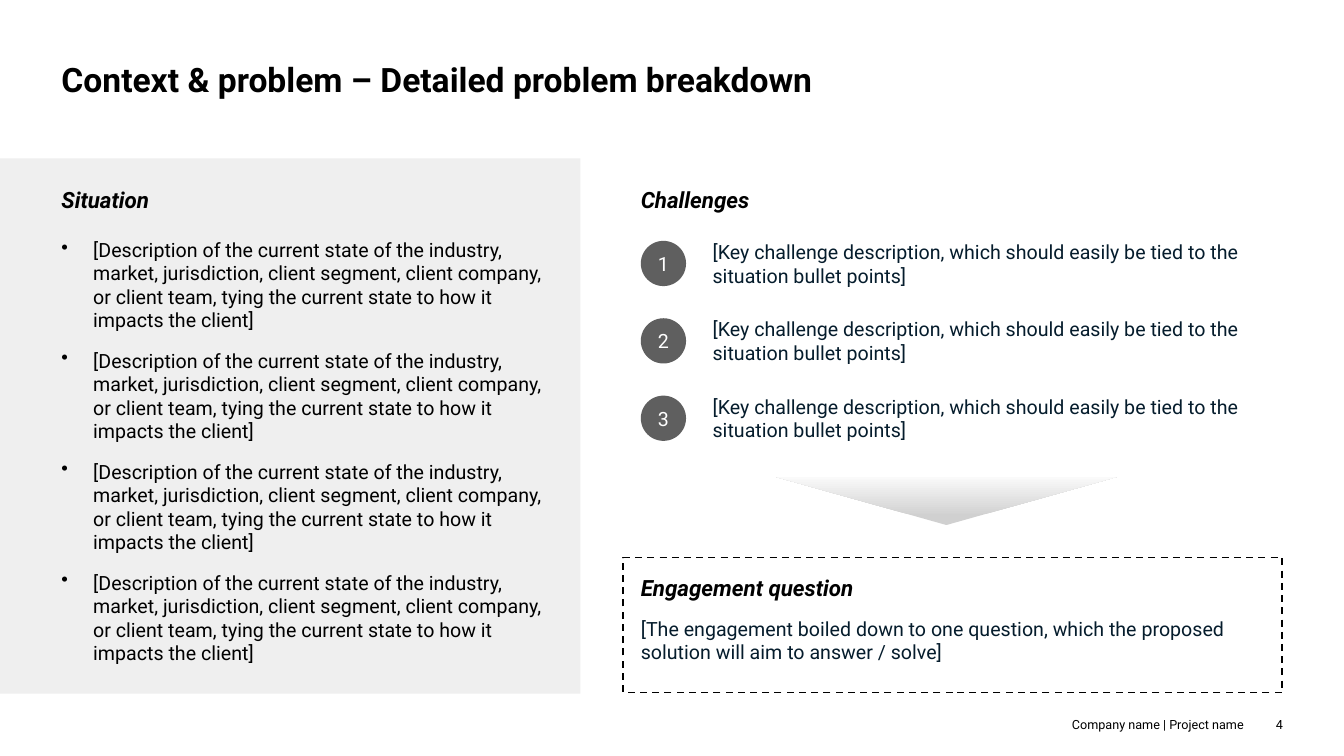
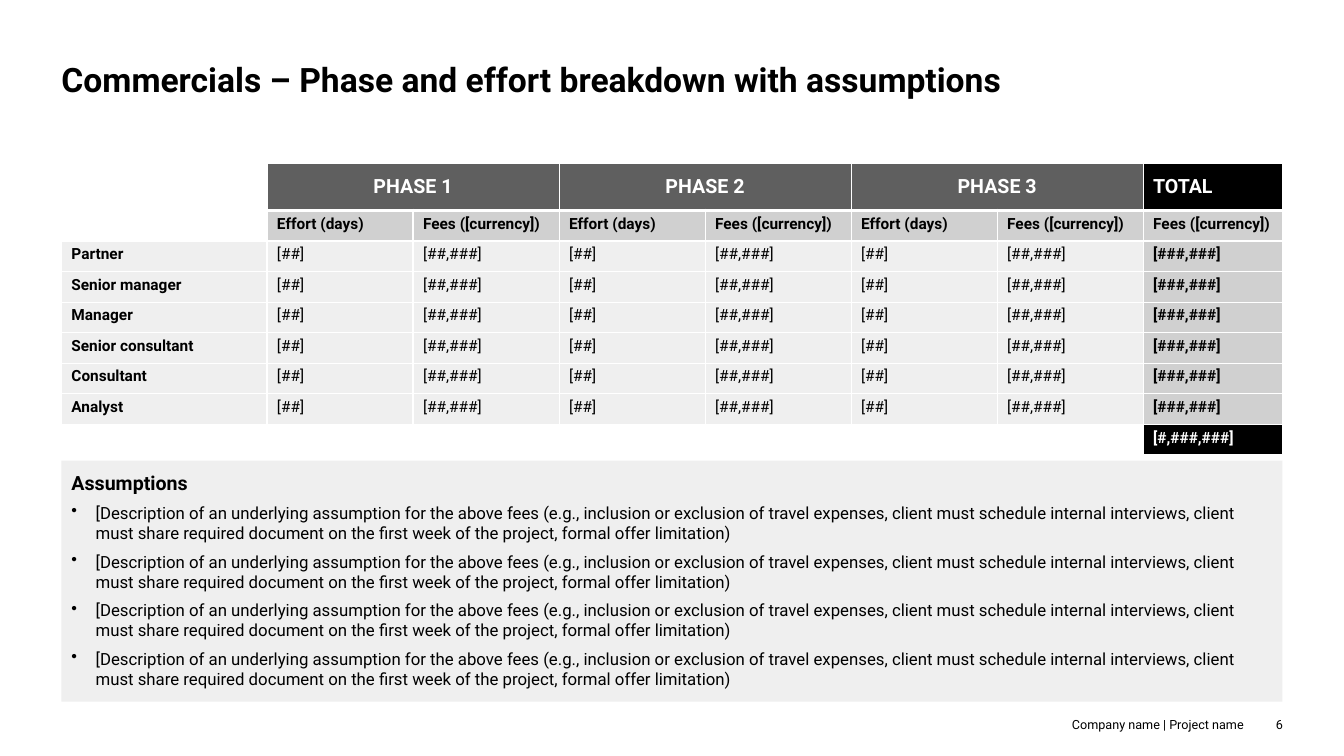
from dataclasses import dataclass

from lxml import etree
from pptx import Presentation
from pptx.dml.color import RGBColor
from pptx.enum.dml import MSO_LINE
from pptx.enum.shapes import MSO_SHAPE
from pptx.enum.text import MSO_ANCHOR, PP_ALIGN
from pptx.oxml.ns import qn
from pptx.util import Cm, Pt

TOP, MIDDLE, BOTTOM = MSO_ANCHOR.TOP, MSO_ANCHOR.MIDDLE, MSO_ANCHOR.BOTTOM
LEFT, CENTER, RIGHT = PP_ALIGN.LEFT, PP_ALIGN.CENTER, PP_ALIGN.RIGHT
RECT, OVAL, TRIANGLE = MSO_SHAPE.RECTANGLE, MSO_SHAPE.OVAL, MSO_SHAPE.ISOSCELES_TRIANGLE
DASH = MSO_LINE.DASH


@dataclass(frozen=True)
class Theme:
    font: str = "Roboto"
    black: str = "000000"
    white: str = "FFFFFF"
    navy: str = "051C2C"
    dark: str = "5F5F5F"
    mid: str = "D0D0D0"
    light: str = "EFEFEF"
    pale: str = "FAFAFA"
    title: int = 24
    heading: int = 16
    body: int = 14
    note: int = 12
    cell: int = 11
    footer: int = 9


T = Theme()

# Content
FOOTER = "Company name | Project name"
PROBLEM = {
    "title": "Context & problem – Detailed problem breakdown",
    "page": 4,
    "situation": ["[Description of the current state of the industry, market, jurisdiction, "
                  "client segment, client company, or client team, tying the current state "
                  "to how it impacts the client]"] * 4,
    "challenges": ["[Key challenge description, which should easily be tied to the "
                   "situation bullet points]"] * 3,
    "question": "[The engagement boiled down to one question, which the proposed "
                "solution will aim to answer / solve]",
}
COMMERCIALS = {
    "title": "Commercials – Phase and effort breakdown with assumptions",
    "page": 6,
    "phases": ["PHASE 1", "PHASE 2", "PHASE 3"],
    "roles": ["Partner", "Senior manager", "Manager", "Senior consultant",
              "Consultant", "Analyst"],
    "effort": ("Effort (days)", "[##]"),
    "fees": ("Fees ([currency])", "[##,###]"),
    "role_total": "[###,###]",
    "grand_total": "[#,###,###]",
    "assumptions": ["[Description of an underlying assumption for the above fees (e.g., "
                    "inclusion or exclusion of travel expenses, client must schedule internal "
                    "interviews, client must share required document on the first week of the "
                    "project, formal offer limitation)"] * 4,
}

# Shared grid, in cm
SLIDE_W, SLIDE_H = 33.87, 19.05
MARGIN = 1.55
CONTENT_W = SLIDE_W - 2 * MARGIN
RIGHT_X = 16.15
RIGHT_W = SLIDE_W - MARGIN - RIGHT_X


# Text and shape helpers
def rgb(value):
    return RGBColor.from_string(value)


def set_up_frame(frame, anchor=TOP, insets=(0, 0, 0, 0), wrap=True):
    frame.word_wrap = wrap
    frame.vertical_anchor = anchor
    (frame.margin_left, frame.margin_top,
     frame.margin_right, frame.margin_bottom) = map(Cm, insets)


def write(paragraph, text, size, color=T.black, bold=False, italic=False, align=LEFT):
    paragraph.alignment = align
    run = paragraph.add_run()
    run.text = text
    font = run.font
    font.name, font.size, font.bold, font.italic = T.font, Pt(size), bold, italic
    font.color.rgb = rgb(color)


def write_bullets(paragraphs, texts, size, indent, gap):
    for paragraph, text in zip(paragraphs, texts):
        write(paragraph, text, size)
        paragraph.space_after = Pt(gap)
        props = paragraph._p.get_or_add_pPr()
        props.set("marL", str(Cm(indent)))
        props.set("indent", str(-Cm(indent)))
        etree.SubElement(props, qn("a:buChar")).set("char", "•")


def add_text(slide, box, text, size, anchor=TOP, wrap=True, **style):
    frame = slide.shapes.add_textbox(*map(Cm, box)).text_frame
    set_up_frame(frame, anchor, wrap=wrap)
    write(frame.paragraphs[0], text, size, **style)


def add_heading(slide, x, y, width, text):
    add_text(slide, (x, y, width, 0.69), text, T.heading, bold=True, italic=True)


def add_block(slide, kind, box, fill=None):
    block = slide.shapes.add_shape(kind, *map(Cm, box))
    block.shadow.inherit = False
    block.line.fill.background()
    if fill:
        block.fill.solid()
        block.fill.fore_color.rgb = rgb(fill)
    else:
        block.fill.background()
    return block


def add_slide(deck, content):
    slide = deck.slides.add_slide(deck.slide_layouts[6])
    add_text(slide, (MARGIN, 0.99, CONTENT_W, 1.5), content["title"], T.title, BOTTOM, bold=True)
    add_text(slide, (26.92, 18.06, 4.42, 0.38), FOOTER, T.footer, BOTTOM, wrap=False, align=RIGHT)
    add_text(slide, (31.42, 18.06, 0.91, 0.38), str(content["page"]), T.footer, BOTTOM, align=RIGHT)
    return slide


# Problem breakdown
def add_challenge(slide, number, text):
    size, pitch = 1.14, 1.95
    y = 6.07 + (number - 1) * pitch
    badge = add_block(slide, OVAL, (RIGHT_X, y, size, size), T.dark)
    set_up_frame(badge.text_frame, MIDDLE)
    write(badge.text_frame.paragraphs[0], str(number), T.body, T.white, align=CENTER)
    text_x, text_h = RIGHT_X + 1.81, 1.57
    add_text(slide, (text_x, y + (size - text_h) / 2, RIGHT_X + RIGHT_W - text_x, text_h),
             text, T.body, MIDDLE, color=T.navy)


def build_problem(deck):
    slide = add_slide(deck, PROBLEM)

    # Situation
    add_block(slide, RECT, (0, 3.99, 14.63, 13.6 - 0.11), T.light)
    add_heading(slide, MARGIN, 4.7, 12.6, "Situation")
    points = slide.shapes.add_textbox(Cm(MARGIN), Cm(5.74), Cm(12.6), Cm(11.4)).text_frame
    set_up_frame(points, insets=(0, 0.25, 0.25, 0.25))
    for _ in PROBLEM["situation"][1:]:
        points.add_paragraph()
    write_bullets(points.paragraphs, PROBLEM["situation"], T.body, indent=0.8, gap=12)

    # Challenges
    add_heading(slide, RIGHT_X, 4.7, RIGHT_W, "Challenges")
    for number, text in enumerate(PROBLEM["challenges"], 1):
        add_challenge(slide, number, text)

    # Pointer down to the question
    pointer = add_block(slide, TRIANGLE, (19.53, 12.01, 8.64, 1.22))
    pointer.rotation = 180
    pointer.fill.gradient()
    pointer.fill.gradient_angle = 270
    for stop, (position, color) in zip(pointer.fill.gradient_stops,
                                       [(0.18, T.mid), (1, T.pale)]):
        stop.position = position
        stop.color.rgb = rgb(color)

    # Engagement question
    frame = add_block(slide, RECT, (15.7, 14.05, 16.61, 3.4))
    frame.line.color.rgb = rgb(T.black)
    frame.line.width = Pt(1.25)
    frame.line.dash_style = DASH
    add_heading(slide, RIGHT_X, 14.48, RIGHT_W, "Engagement question")
    add_text(slide, (RIGHT_X, 15.54, 15.65, 1.57), PROBLEM["question"], T.body, color=T.navy)


# Commercials
def fee_rows():
    """Each cell is (text, fill, text colour, bold); None leaves it empty."""
    c = COMMERCIALS
    phases = c["phases"]
    pairs = [c["effort"], c["fees"]] * len(phases)
    header = [None]
    for phase in phases:
        header += [(phase, T.dark, T.white, True), None]
    header.append(("TOTAL", T.black, T.white, True))
    labels = [label for label, _ in pairs] + [c["fees"][0]]
    rows = [header, [None] + [(label, T.mid, T.black, True) for label in labels]]
    for role in c["roles"]:
        rows.append([(role, T.light, T.black, True)]
                    + [(value, T.light, T.black, False) for _, value in pairs]
                    + [(c["role_total"], T.mid, T.black, True)])
    rows.append([None] * (len(pairs) + 1) + [(c["grand_total"], T.black, T.white, True)])
    return rows


def set_borders(cell, bottom):
    props = cell._tc.get_or_add_tcPr()
    widths = {"a:lnL": 1, "a:lnR": 1, "a:lnT": 1, "a:lnB": bottom}
    for place, (tag, width) in enumerate(widths.items()):
        line = etree.Element(qn(tag), w=str(Pt(width)))
        fill = etree.SubElement(line, qn("a:solidFill"))
        etree.SubElement(fill, qn("a:srgbClr")).set("val", T.white)
        props.insert(place, line)


def fill_cell(cell, content, is_header, align):
    pad_top, pad_bottom = (0.3, 0.3) if is_header else (0.1, 0.2)
    cell.margin_left = cell.margin_right = Cm(0.25)
    cell.margin_top, cell.margin_bottom = Cm(pad_top), Cm(pad_bottom)
    cell.vertical_anchor = MIDDLE
    paragraph = cell.text_frame.paragraphs[0]
    if content:
        text, fill, color, bold = content
        cell.fill.solid()
        cell.fill.fore_color.rgb = rgb(fill)
        write(paragraph, text, T.body if is_header else T.cell, color, bold, align=align)
    else:
        cell.fill.background()
        paragraph._p.get_or_add_endParaRPr().set("sz", str(T.cell * 100))
    set_borders(cell, bottom=3 if is_header else 1)


def add_fee_table(slide):
    rows = fee_rows()
    phase_columns = range(1, len(rows[0]) - 1, 2)
    widths = [5.18] + [3.68] * (2 * len(phase_columns)) + [3.5]
    heights = [1.19] + [0.77] * (len(rows) - 1)
    table = slide.shapes.add_table(len(rows), len(widths), Cm(MARGIN), Cm(4.11),
                                   Cm(sum(widths)), Cm(sum(heights))).table
    table.first_row = table.horz_banding = False
    for column, width in zip(table.columns, widths):
        column.width = Cm(width)
    for row, height in zip(table.rows, heights):
        row.height = Cm(height)
    for r, row in enumerate(rows):
        for c, content in enumerate(row):
            align = CENTER if r == 0 and c in phase_columns else LEFT
            fill_cell(table.cell(r, c), content, r == 0, align)
    for r in (0, len(rows) - 1):
        for c in phase_columns:
            table.cell(r, c).merge(table.cell(r, c + 1))


def build_commercials(deck):
    slide = add_slide(deck, COMMERCIALS)
    add_fee_table(slide)

    # Assumptions
    panel = add_block(slide, RECT, (MARGIN, 11.61, CONTENT_W, 6.07), T.light).text_frame
    set_up_frame(panel, insets=(0.25,) * 4)
    heading = panel.paragraphs[0]
    write(heading, "Assumptions", T.body, bold=True)
    heading.space_after = Pt(6)
    points = [panel.add_paragraph() for _ in COMMERCIALS["assumptions"]]
    write_bullets(points, COMMERCIALS["assumptions"], T.note, indent=0.61, gap=6)


def main():
    deck = Presentation()
    deck.slide_width, deck.slide_height = Cm(SLIDE_W), Cm(SLIDE_H)
    build_problem(deck)
    build_commercials(deck)
    deck.save("out.pptx")


if __name__ == "__main__":
    main()
